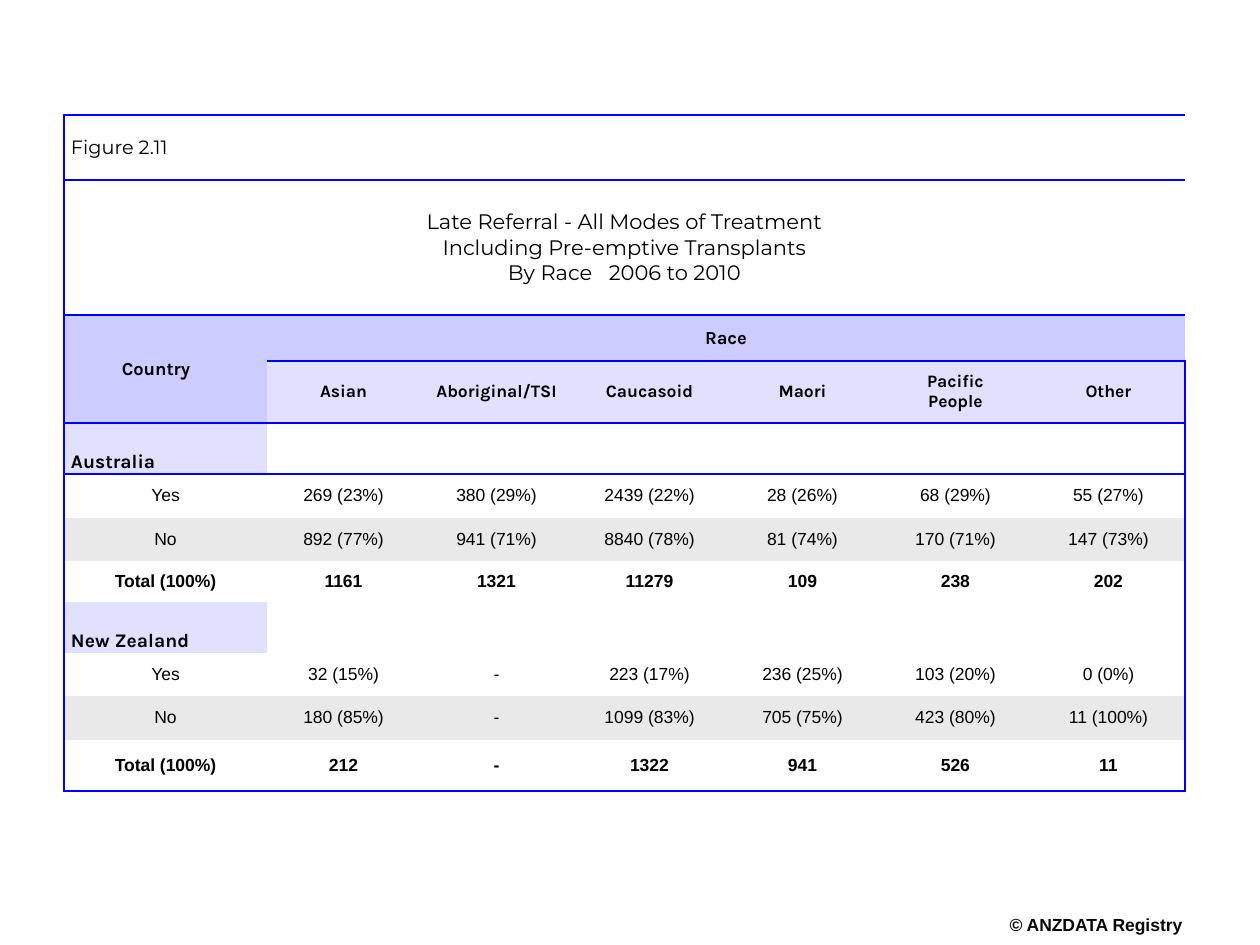
from lxml import etree
from pptx import Presentation
from pptx.dml.color import RGBColor
from pptx.enum.text import MSO_ANCHOR, PP_ALIGN
from pptx.oxml.ns import qn
from pptx.util import Emu, Pt

PX = 7257.14  # EMU in one px, 126 px to the inch
LEFT, CENTER = PP_ALIGN.LEFT, PP_ALIGN.CENTER
MIDDLE, BOTTOM = MSO_ANCHOR.MIDDLE, MSO_ANCHOR.BOTTOM
PLAIN_STYLE = "{2D5ABB26-0587-4C30-8999-92F81FD0307C}"

BLACK = RGBColor(0x00, 0x00, 0x00)
FOOTER_INK = RGBColor(0x08, 0x08, 0x08)
BLUE = RGBColor(0x00, 0x00, 0xFF)
LAVENDER = RGBColor(0xCC, 0xCC, 0xFF)
PALE_LAVENDER = RGBColor(0xE1, 0xE1, 0xFF)
GREY = RGBColor(0xE9, 0xE9, 0xE9)

FIGURE = "Figure 2.11"
CAPTION = ("Late Referral - All Modes of Treatment\n"
           "Including Pre-emptive Transplants\n"
           "By Race   2006 to 2010")
RACES = ["Asian", "Aboriginal/TSI", "Caucasoid", "Maori", "Pacific\nPeople", "Other"]
COUNTRIES = {
    "Australia": [
        ["Yes", "269 (23%)", "380 (29%)", "2439 (22%)", "28 (26%)", "68 (29%)", "55 (27%)"],
        ["No", "892 (77%)", "941 (71%)", "8840 (78%)", "81 (74%)", "170 (71%)", "147 (73%)"],
        ["Total (100%)", "1161", "1321", "11279", "109", "238", "202"],
    ],
    "New Zealand": [
        ["Yes", "32 (15%)", "-", "223 (17%)", "236 (25%)", "103 (20%)", "0 (0%)"],
        ["No", "180 (85%)", "-", "1099 (83%)", "705 (75%)", "423 (80%)", "11 (100%)"],
        ["Total (100%)", "212", "-", "1322", "941", "526", "11"],
    ],
}
FOOTER = "© ANZDATA Registry"

TABLE_LEFT, TABLE_TOP = 64, 115
COLUMN_WIDTHS = [203] + [153] * 6
ROW_HEIGHTS = [65, 135, 46, 62, 49, 44, 43, 41, 51, 43, 44, 51]
LAST_ROW, LAST_COLUMN = len(ROW_HEIGHTS) - 1, len(COLUMN_WIDTHS) - 1
RULED_TOPS = [0, 1, 2, 4]  # rows with a full line above them
SIDE_MARGIN, LABEL_INDENT, COUNTRY_INDENT = 3, 7, 22

FIGURE_FONT = {"name": "Montserrat", "size": Pt(11), "bold": False}
CAPTION_FONT = {"name": "Montserrat", "size": Pt(12), "bold": False}
HEAD_FONT = {"name": "Karla", "size": Pt(10.5), "bold": True}
RACE_FONT = {"name": "Karla", "size": Pt(10), "bold": True}
COUNTRY_FONT = {"name": "Karla", "size": Pt(11), "bold": True}
VALUE_FONT = {"name": "Arial", "size": Pt(10), "bold": False}
TOTAL_FONT = {"name": "Arial", "size": Pt(10), "bold": True}


def px(length):
    return Emu(round(length * PX))


def write(frame, text, font, align=CENTER, color=BLACK):
    for index, line in enumerate(text.split("\n")):
        para = frame.paragraphs[0] if index == 0 else frame.add_paragraph()
        para.alignment = align
        span = para.add_run()
        span.text = line
        for key, value in font.items():
            setattr(span.font, key, value)
        span.font.color.rgb = color


def fill_cell(cell, text, font, fill=None, align=CENTER, anchor=MIDDLE,
              left=SIDE_MARGIN, right=SIDE_MARGIN):
    write(cell.text_frame, text, font, align)
    cell.vertical_anchor = anchor
    cell.margin_left, cell.margin_right = px(left), px(right)
    cell.margin_top = cell.margin_bottom = px(1)
    if fill is not None:
        cell.fill.solid()
        cell.fill.fore_color.rgb = fill


def draw_borders(cell, row, column):
    """Frame the table, rule the listed rows and underline the race heading."""
    under_race = 0.75 if column > 0 else None
    widths = {
        "a:lnL": 1 if column == 0 else None,
        "a:lnR": 1 if column == LAST_COLUMN else None,
        "a:lnT": 1 if row in RULED_TOPS else under_race if row == 3 else None,
        "a:lnB": 1 if row == LAST_ROW or row + 1 in RULED_TOPS
        else under_race if row == 2 else None,
    }
    properties = cell._tc.get_or_add_tcPr()
    for tag, width in widths.items():
        if width is None:
            continue
        line = etree.SubElement(properties, qn(tag), w=str(Pt(width)))
        solid = etree.SubElement(line, qn("a:solidFill"))
        etree.SubElement(solid, qn("a:srgbClr"), val=str(BLUE))


def add_referral_table(page):
    table = page.shapes.add_table(
        len(ROW_HEIGHTS), len(COLUMN_WIDTHS), px(TABLE_LEFT), px(TABLE_TOP),
        px(sum(COLUMN_WIDTHS)), px(sum(ROW_HEIGHTS))).table
    table.first_row = table.horz_banding = False
    table._tbl.tblPr.find(qn("a:tableStyleId")).text = PLAIN_STYLE
    for column, width in zip(table.columns, COLUMN_WIDTHS):
        column.width = px(width)
    for row, height in zip(table.rows, ROW_HEIGHTS):
        row.height = px(height)
    for row in range(LAST_ROW + 1):
        for column in range(LAST_COLUMN + 1):
            cell = table.cell(row, column)
            draw_borders(cell, row, column)
            cell.fill.background()

    for first, last in [((0, 0), (0, 6)), ((1, 0), (1, 6)),
                        ((2, 0), (3, 0)), ((2, 1), (2, 6))]:
        table.cell(*first).merge(table.cell(*last))
    fill_cell(table.cell(0, 0), FIGURE, FIGURE_FONT, align=LEFT, left=LABEL_INDENT)
    fill_cell(table.cell(1, 0), CAPTION, CAPTION_FONT)
    fill_cell(table.cell(2, 0), "Country", HEAD_FONT, LAVENDER, right=COUNTRY_INDENT)
    fill_cell(table.cell(2, 1), "Race", HEAD_FONT, LAVENDER)
    for column, race in enumerate(RACES, 1):
        fill_cell(table.cell(3, column), race, RACE_FONT, PALE_LAVENDER)

    row = 4
    for country, records in COUNTRIES.items():
        fill_cell(table.cell(row, 0), country, COUNTRY_FONT, PALE_LAVENDER,
                  LEFT, BOTTOM, left=LABEL_INDENT)
        for row, record in enumerate(records, row + 1):
            font = TOTAL_FONT if record[0].startswith("Total") else VALUE_FONT
            fill = GREY if record[0] == "No" else None
            for column, value in enumerate(record):
                fill_cell(table.cell(row, column), value, font, fill)
        row += 1


def add_footer(page):
    box = page.shapes.add_textbox(px(1007), px(917), px(178), px(21))
    frame = box.text_frame
    frame.margin_left = frame.margin_right = frame.margin_top = frame.margin_bottom = 0
    frame.word_wrap = False
    write(frame, FOOTER, TOTAL_FONT, color=FOOTER_INK)
    frame.paragraphs[0].line_spacing = 0.85


def main():
    deck = Presentation()
    deck.slide_width, deck.slide_height = px(1260), px(945)
    page = deck.slides.add_slide(deck.slide_layouts[6])
    add_referral_table(page)
    add_footer(page)
    deck.save("out.pptx")


if __name__ == "__main__":
    main()
